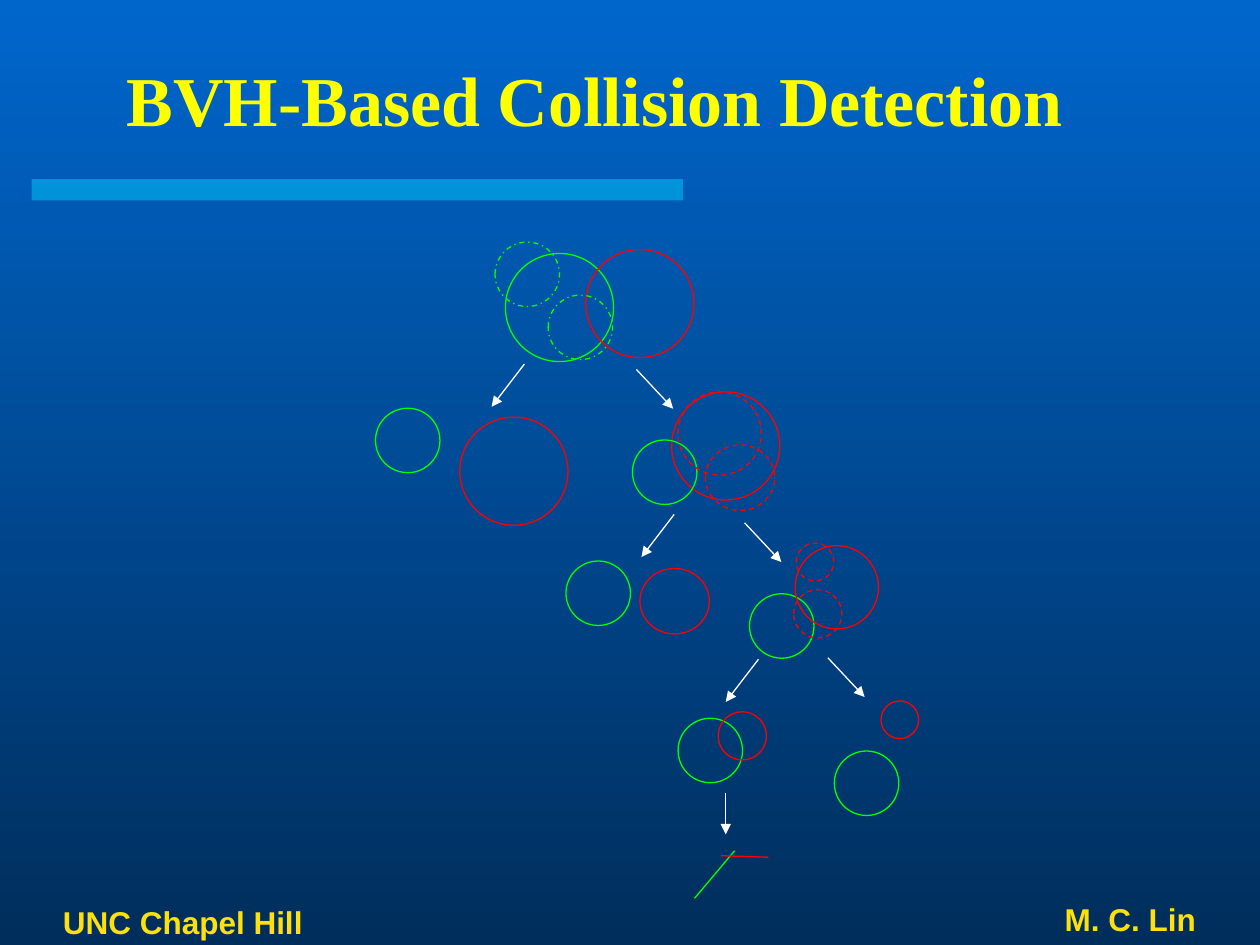
from lxml.etree import SubElement
from pptx import Presentation
from pptx.dml.color import RGBColor
from pptx.enum.dml import MSO_LINE
from pptx.enum.shapes import MSO_CONNECTOR, MSO_SHAPE
from pptx.enum.text import MSO_ANCHOR, MSO_AUTO_SIZE, PP_ALIGN
from pptx.oxml.ns import qn
from pptx.util import Cm, Pt

COLOURS = {
    "sky": "0066CC", "deep": "002E5C", "bar": "00CCFF", "title": "FFFF00",
    "footer": "FDE00D", "green": "00FF00", "red": "FF0000", "arrow": "FFFFFF",
}
TITLE_FORMAT = {"name": "Times New Roman", "size": Pt(40), "bold": True}
FOOTER_FORMAT = {"name": "Arial", "size": Pt(18), "bold": True}
LARGE, MEDIUM, SMALL = (2.18, 2.18), (1.68, 1.68), (1.3, 1.3)
OVAL, LITTLE, TINY = (1.4, 1.32), (0.97, 0.97), (0.76, 0.76)
SOLID, DASH, DASH_DOT = None, MSO_LINE.DASH, MSO_LINE.DASH_DOT
LEFT, RIGHT, DOWN = (-0.66, 0.86), (0.74, 0.79), (0, 0.84)

SPHERES = [
    (5.97, 3.02, LARGE, "red", SOLID),
    (2.62, 0.23, LARGE, "green", SOLID),
    (0, 3.35, SMALL, "green", SOLID),
    (5.18, 3.99, SMALL, "green", SOLID),
    (1.7, 3.53, LARGE, "red", SOLID),
    (4.24, 0.15, LARGE, "red", SOLID),
    (2.41, 0, SMALL, "green", DASH_DOT),
    (3.48, 1.07, SMALL, "green", DASH_DOT),
    (6.1, 3.02, MEDIUM, "red", DASH),
    (6.65, 4.09, OVAL, "red", DASH),
    (3.84, 6.43, SMALL, "green", SOLID),
    (5.33, 6.58, OVAL, "red", SOLID),
    (7.54, 7.09, SMALL, "green", SOLID),
    (8.46, 6.12, MEDIUM, "red", SOLID),
    (8.48, 6.07, TINY, "red", DASH),
    (8.43, 7.01, LITTLE, "red", DASH),
    (6.1, 9.6, SMALL, "green", SOLID),
    (6.91, 9.47, LITTLE, "red", SOLID),
    (9.25, 10.26, SMALL, "green", SOLID),
    (10.19, 9.25, TINY, "red", SOLID),
]
PRIMITIVES = [
    (6.43, 13.23, (0.81, -0.96), "green"),
    (6.96, 12.37, (0.96, 0.03), "red"),
]
ARROWS = [
    (3, 2.46, LEFT), (5.26, 2.57, RIGHT),
    (6.02, 5.49, LEFT), (7.44, 5.66, RIGHT),
    (7.72, 8.41, LEFT), (9.12, 8.38, RIGHT),
    (7.06, 11.1, DOWN),
]


def colour(name):
    """Return the named colour."""
    return RGBColor.from_string(COLOURS[name])


def write(frame, text, alignment, formats, ink):
    """Write one formatted, vertically centred line into a text frame."""
    frame.vertical_anchor = MSO_ANCHOR.MIDDLE
    frame.auto_size = MSO_AUTO_SIZE.NONE
    para = frame.paragraphs[0]
    para.alignment = alignment
    span = para.add_run()
    span.text = text
    for key, value in formats.items():
        setattr(span.font, key, value)
    span.font.color.rgb = colour(ink)


def paint_background(page):
    """Fill the page with a gradient from top to bottom."""
    fill = page.background.fill
    fill.gradient()
    fill.gradient_angle = 270
    for stop, name in zip(fill.gradient_stops, ("sky", "deep")):
        stop.color.rgb = colour(name)


def add_bar(page, box):
    """Draw the half transparent bar below the title."""
    bar = page.shapes.add_shape(MSO_SHAPE.RECTANGLE, *map(Cm, box))
    bar.shadow.inherit = False
    bar.line.fill.background()
    bar.fill.solid()
    bar.fill.fore_color.rgb = colour("bar")
    tint = bar.fill._xPr.find(qn("a:solidFill"))[0]
    SubElement(tint, qn("a:alpha"), val="50000")


def add_title(page, box, text):
    """Place and fill the title placeholder."""
    title = page.shapes.title
    for key, value in zip(("left", "top", "width", "height"), box):
        setattr(title, key, Cm(value))
    title.text_frame.word_wrap = True
    write(title.text_frame, text, PP_ALIGN.CENTER, TITLE_FORMAT, "title")


def add_footer(page, box, text, alignment):
    """Add one footer label."""
    label = page.shapes.add_textbox(*map(Cm, box))
    label.text_frame.word_wrap = False
    write(label.text_frame, text, alignment, FOOTER_FORMAT, "footer")


def add_segment(group, start, reach, ink):
    """Draw a straight line from a start point along a reach, both in cm."""
    end = [place + step for place, step in zip(start, reach)]
    segment = group.shapes.add_connector(
        MSO_CONNECTOR.STRAIGHT, *map(Cm, (*start, *end)))
    segment.line.width = Pt(0.75)
    segment.line.color.rgb = colour(ink)
    SubElement(segment._element.spPr, qn("a:effectLst"))
    return segment


def add_sphere(group, corner, size, ink, dash):
    """Draw one bounding sphere as an outlined ellipse."""
    sphere = group.shapes.add_shape(MSO_SHAPE.OVAL, *map(Cm, (*corner, *size)))
    sphere.shadow.inherit = False
    sphere.fill.background()
    sphere.line.width = Pt(0.75)
    sphere.line.color.rgb = colour(ink)
    if dash:
        sphere.line.dash_style = dash


def add_tree(page, box):
    """Draw the tree of sphere pairs inside its box."""
    left, top = box[:2]
    group = page.shapes.add_group_shape()
    for x, y, size, ink, dash in SPHERES:
        add_sphere(group, (left + x, top + y), size, ink, dash)
    for x, y, reach, ink in PRIMITIVES:
        add_segment(group, (left + x, top + y), reach, ink)
    for x, y, reach in ARROWS:
        arrow = add_segment(group, (left + x, top + y), reach, "arrow")
        SubElement(arrow.line._get_or_add_ln(), qn("a:tailEnd"), type="triangle")


def main():
    """Build and save the deck."""
    deck = Presentation()
    deck.slide_width, deck.slide_height = Cm(25.4), Cm(19.05)
    page = deck.slides.add_slide(deck.slide_layouts[5])
    paint_background(page)
    add_bar(page, (0.64, 3.61, 13.13, 0.43))
    add_footer(page, (1.02, 18.14, 5.28, 0.91), "UNC Chapel Hill", PP_ALIGN.LEFT)
    add_footer(page, (13.26, 18.01, 11.1, 1.04), "M. C. Lin", PP_ALIGN.RIGHT)
    add_title(page, (0.74, 0.81, 22.5, 2.36), "BVH-Based Collision Detection")
    add_tree(page, (7.57, 4.88, 10.95, 13.23))
    deck.save("out.pptx")


if __name__ == "__main__":
    main()
